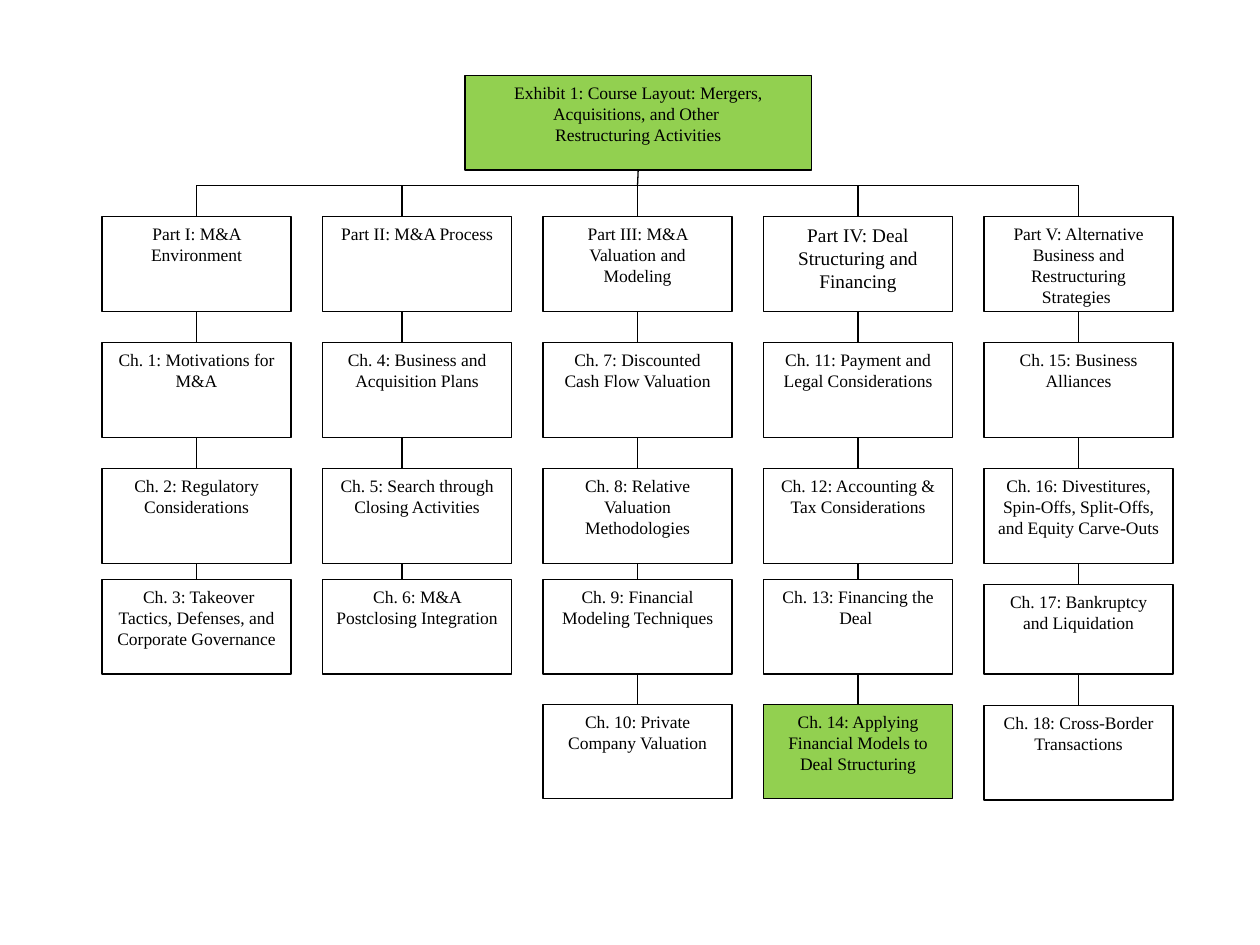
from dataclasses import dataclass

from lxml import etree
from pptx import Presentation
from pptx.dml.color import RGBColor
from pptx.enum.shapes import MSO_CONNECTOR, MSO_SHAPE
from pptx.enum.text import MSO_ANCHOR, PP_ALIGN
from pptx.oxml.ns import qn
from pptx.util import Inches, Pt

RECT = MSO_SHAPE.RECTANGLE
STRAIGHT = MSO_CONNECTOR.STRAIGHT
CENTER = PP_ALIGN.CENTER
TOP = MSO_ANCHOR.TOP
TOP_SIDE, BOTTOM_SIDE = 0, 2


@dataclass(frozen=True)
class Theme:
    font: str = "Times New Roman"
    ink: RGBColor = RGBColor(0, 0, 0)
    paper: RGBColor = RGBColor(255, 255, 255)
    accent: RGBColor = RGBColor(0x92, 0xD0, 0x50)
    size: Pt = Pt(10)
    large: Pt = Pt(11)
    line: Pt = Pt(0.75)


THEME = Theme()

BOX_W, BOX_H = 1.5, 0.75
COL_LEFT, COL_STEP = 0.81, 1.75
ROW_TOPS = [1.72, 2.72, 3.72, 4.6, 5.59]
BUS_Y = 1.47
PROCESS_COL, PROCESS_LINE_X = 1, 3.19  # this column's lines run left of centre

TITLE = ("Exhibit 1: Course Layout: Mergers, Acquisitions, and Other \n"
         "Restructuring Activities")
COLUMNS = [
    ["Part I: M&A Environment",
     "Ch. 1: Motivations for M&A",
     "Ch. 2: Regulatory Considerations",
     " Ch. 3: Takeover Tactics, Defenses, and Corporate Governance"],
    ["Part II: M&A Process",
     "Ch. 4: Business and Acquisition Plans",
     "Ch. 5: Search through Closing Activities",
     "Ch. 6: M&A Postclosing Integration"],
    ["Part III: M&A Valuation and Modeling",
     "Ch. 7: Discounted Cash Flow Valuation",
     "Ch. 8: Relative Valuation Methodologies",
     "Ch. 9: Financial Modeling Techniques",
     "Ch. 10: Private Company Valuation"],
    ["Part IV: Deal Structuring and Financing",
     "Ch. 11: Payment and Legal Considerations",
     "Ch. 12: Accounting & Tax Considerations",
     "Ch. 13: Financing the Deal ",
     "Ch. 14: Applying Financial Models to Deal Structuring"],
    ["Part V: Alternative Business and Restructuring Strategies ",
     "Ch. 15: Business Alliances",
     "Ch. 16: Divestitures, Spin-Offs, Split-Offs, and Equity Carve-Outs",
     "Ch. 17: Bankruptcy and Liquidation",
     "Ch. 18: Cross-Border Transactions"],
]
HIGHLIGHTED = (3, 4)
LARGE_TEXT = (3, 0)
PLACEMENTS = {(4, 3): (4.64, 0.71), (4, 4): (5.6, BOX_H)}  # top, height


def add_box(s, text, left, top, width=BOX_W, height=BOX_H,
            fill=THEME.paper, size=THEME.size):
    sp = s.shapes.add_shape(RECT, Inches(left), Inches(top),
                            Inches(width), Inches(height))
    sp.shadow.inherit = False
    sp.fill.solid()
    sp.fill.fore_color.rgb = fill
    sp.line.color.rgb = THEME.ink
    sp.line.width = THEME.line
    tf = sp.text_frame
    tf.word_wrap = True
    tf.vertical_anchor = TOP
    tf.text = text
    for p in tf.paragraphs:
        p.alignment = CENTER
        for r in p.runs:
            r.font.name = THEME.font
            r.font.size = size
            r.font.color.rgb = THEME.ink
    return sp


def add_line(s, x1, y1, x2, y2):
    line = s.shapes.add_connector(STRAIGHT, Inches(x1), Inches(y1),
                                  Inches(x2), Inches(y2))
    line.line.color.rgb = THEME.ink
    line.line.width = THEME.line
    etree.SubElement(line._element.spPr, qn("a:effectLst"))
    return line


def add_column(s, col, texts):
    """Stack one part and its chapters, linked down from the bus line."""
    left = COL_LEFT + col * COL_STEP
    joined = col != PROCESS_COL
    x = left + BOX_W / 2 if joined else PROCESS_LINE_X
    above, above_bottom = None, BUS_Y
    for row, text in enumerate(texts):
        cell = (col, row)
        top, height = PLACEMENTS.get(cell, (ROW_TOPS[row], BOX_H))
        box = add_box(s, text, left, top, height=height,
                      fill=THEME.accent if cell == HIGHLIGHTED else THEME.paper,
                      size=THEME.large if cell == LARGE_TEXT else THEME.size)
        line = add_line(s, x, above_bottom, x, top)
        if joined:
            if above is not None:
                line.begin_connect(above, BOTTOM_SIDE)
            line.end_connect(box, TOP_SIDE)
        above, above_bottom = box, top + height


def main():
    prs = Presentation()
    prs.slide_width, prs.slide_height = Inches(10), Inches(7.5)
    s = prs.slides.add_slide(prs.slide_layouts[6])

    title = add_box(s, TITLE, 3.69, 0.6, width=2.75, fill=THEME.accent)
    first_x = COL_LEFT + BOX_W / 2
    last_x = first_x + COL_STEP * (len(COLUMNS) - 1)
    middle_x = (first_x + last_x) / 2
    add_line(s, first_x, BUS_Y, last_x, BUS_Y)
    stem = add_line(s, middle_x, 1.35, middle_x, BUS_Y)
    stem.begin_connect(title, BOTTOM_SIDE)
    for col, texts in enumerate(COLUMNS):
        add_column(s, col, texts)

    prs.save("out.pptx")


if __name__ == "__main__":
    main()
